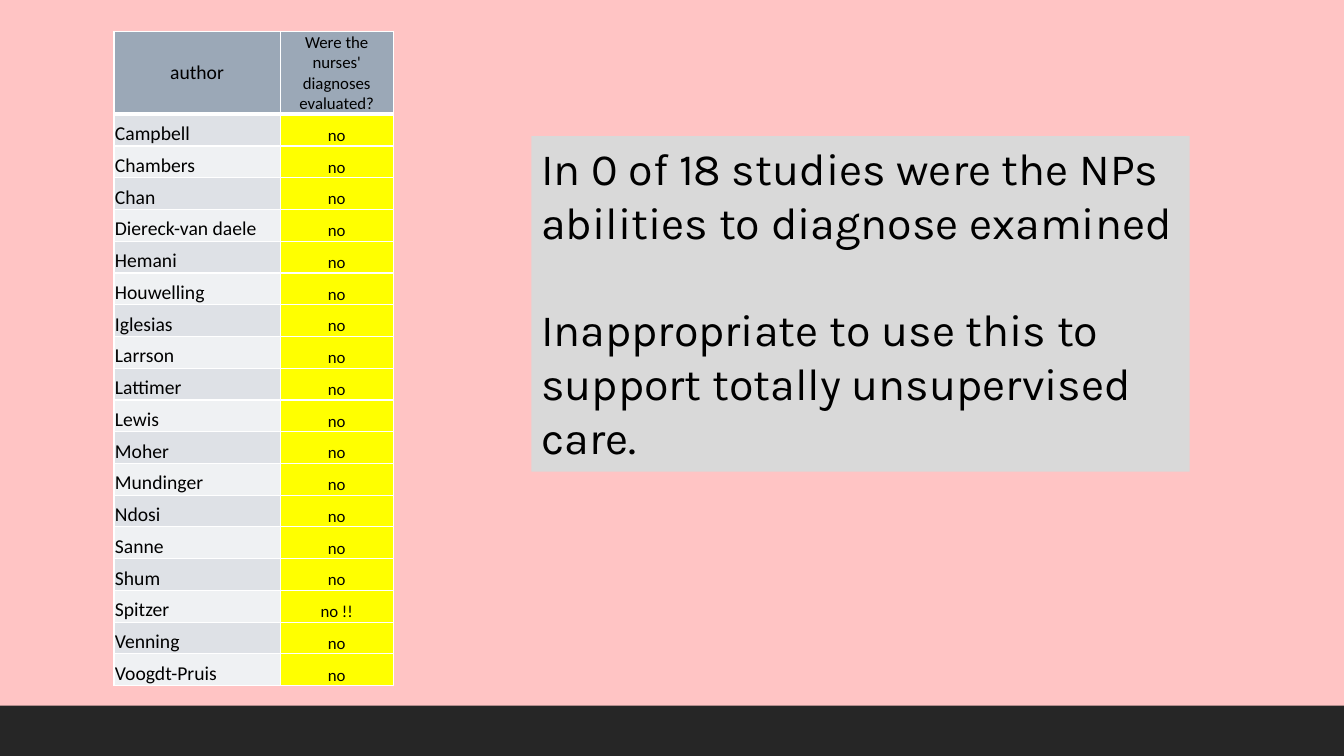
from dataclasses import dataclass

from lxml import etree
from pptx import Presentation
from pptx.dml.color import RGBColor
from pptx.enum.shapes import MSO_SHAPE
from pptx.enum.text import MSO_ANCHOR, MSO_AUTO_SIZE, PP_ALIGN
from pptx.oxml.ns import qn
from pptx.slide import Slide
from pptx.table import _Cell
from pptx.text.text import _Paragraph
from pptx.util import Inches, Pt

RECTANGLE = MSO_SHAPE.RECTANGLE
MIDDLE, BOTTOM = MSO_ANCHOR.MIDDLE, MSO_ANCHOR.BOTTOM
LEFT, CENTER = PP_ALIGN.LEFT, PP_ALIGN.CENTER
GROW = MSO_AUTO_SIZE.SHAPE_TO_FIT_TEXT

COLORS = {
    "background": "FFC4C4",
    "footer": "262626",
    "header": "9BA8B7",
    "odd_row": "DEE1E6",
    "even_row": "EFF1F3",
    "answer": "FFFF00",
    "conclusion": "D9D9D9",
    "border": "FFFFFF",
    "text": "000000",
}

TABLE_HEIGHT, HEADER_HEIGHT = 6.48, 0.81
COLUMN_WIDTHS = (1.65, 1.12)
THIN, THICK = 1, 3


@dataclass
class Study:
    author: str
    answer: str = "no"


@dataclass
class CellStyle:
    fill: str
    size: int
    align: PP_ALIGN = CENTER
    anchor: MSO_ANCHOR = BOTTOM
    top: int = THIN
    bottom: int = THIN


STUDIES = [
    Study("Campbell"), Study("Chambers"), Study("Chan"),
    Study("Diereck-van daele"), Study("Hemani"), Study("Houwelling"),
    Study("Iglesias"), Study("Larrson"), Study("Lattimer"),
    Study("Lewis"), Study("Moher"), Study("Mundinger"),
    Study("Ndosi"), Study("Sanne"), Study("Shum"),
    Study("Spitzer", "no !!"), Study("Venning"), Study("Voogdt-Pruis"),
]

CONCLUSIONS = [
    "In 0 of 18 studies were the NPs abilities to diagnose examined",
    "Inappropriate to use this to support totally unsupervised care.",
]


def color(name: str) -> RGBColor:
    return RGBColor.from_string(COLORS[name])


def add_run(paragraph: _Paragraph, text: str, font: str, size: int) -> None:
    run = paragraph.add_run()
    run.text = text
    run.font.name = font
    run.font.size = Pt(size)
    run.font.color.rgb = color("text")


def set_borders(cell: _Cell, top: int, bottom: int) -> None:
    properties = cell._tc.get_or_add_tcPr()
    sides = {"a:lnL": THIN, "a:lnR": THIN, "a:lnT": top, "a:lnB": bottom}
    for position, (side, width) in enumerate(sides.items()):
        line = etree.Element(qn(side), w=str(Pt(width)))
        fill = etree.SubElement(line, qn("a:solidFill"))
        etree.SubElement(fill, qn("a:srgbClr"), val=COLORS["border"])
        properties.insert(position, line)


def fill_cell(cell: _Cell, text: str, style: CellStyle) -> None:
    cell.margin_left = cell.margin_top = cell.margin_right = Inches(0.01)
    cell.margin_bottom = 0
    cell.vertical_anchor = style.anchor
    cell.fill.solid()
    cell.fill.fore_color.rgb = color(style.fill)
    set_borders(cell, style.top, style.bottom)
    paragraph = cell.text_frame.paragraphs[0]
    paragraph.alignment = style.align
    add_run(paragraph, text, "Calibri", style.size)


def add_footer(slide: Slide) -> None:
    footer = slide.shapes.add_shape(
        RECTANGLE, 0, Inches(7), Inches(13.33), Inches(0.5))
    footer.shadow.inherit = False
    footer.fill.solid()
    footer.fill.fore_color.rgb = color("footer")
    footer.line.fill.background()


def add_studies(slide: Slide) -> None:
    table = slide.shapes.add_table(
        len(STUDIES) + 1, len(COLUMN_WIDTHS), Inches(1.13), Inches(0.31),
        Inches(sum(COLUMN_WIDTHS)), Inches(TABLE_HEIGHT)).table
    for column, width in zip(table.columns, COLUMN_WIDTHS):
        column.width = Inches(width)
    for row in table.rows:
        row.height = Inches((TABLE_HEIGHT - HEADER_HEIGHT) / len(STUDIES))
    table.rows[0].height = Inches(HEADER_HEIGHT)

    # Header row
    headings = (("author", 14), ("Were the nurses' diagnoses evaluated?", 12))
    for column, (heading, size) in enumerate(headings):
        style = CellStyle("header", size, anchor=MIDDLE, bottom=THICK)
        fill_cell(table.cell(0, column), heading, style)

    # One row per study
    for row, study in enumerate(STUDIES, start=1):
        band = "odd_row" if row % 2 else "even_row"
        top = THICK if row == 1 else THIN
        fill_cell(table.cell(row, 0), study.author,
                  CellStyle(band, 14, align=LEFT, top=top))
        fill_cell(table.cell(row, 1), study.answer,
                  CellStyle("answer", 12, top=top))


def add_conclusion(slide: Slide) -> None:
    conclusion = slide.shapes.add_textbox(
        Inches(5.27), Inches(1.35), Inches(6.53), Inches(3.33))
    conclusion.fill.solid()
    conclusion.fill.fore_color.rgb = color("conclusion")
    frame = conclusion.text_frame
    frame.word_wrap = True
    frame.auto_size = GROW
    for index, sentence in enumerate(CONCLUSIONS):
        paragraph = frame.add_paragraph() if index else frame.paragraphs[0]
        paragraph.space_before = Pt(38 if index else 0)
        add_run(paragraph, sentence, "Karla", 32)


def main() -> None:
    deck = Presentation()
    deck.slide_width, deck.slide_height = Inches(13.33), Inches(7.5)
    slide = deck.slides.add_slide(deck.slide_layouts[6])
    slide.background.fill.solid()
    slide.background.fill.fore_color.rgb = color("background")
    add_footer(slide)
    add_studies(slide)
    add_conclusion(slide)
    deck.save("out.pptx")


if __name__ == "__main__":
    main()
